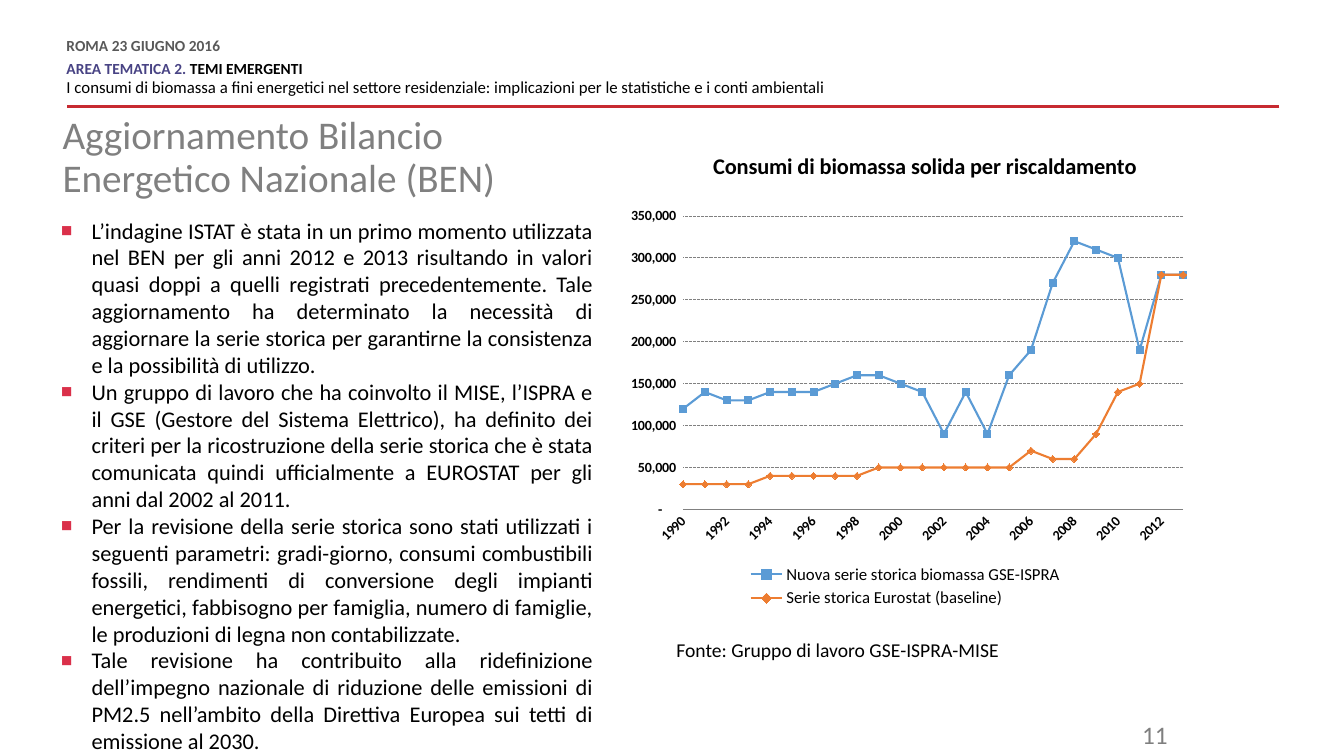
from lxml import etree
from pptx import Presentation
from pptx.chart.data import CategoryChartData
from pptx.dml.color import RGBColor
from pptx.enum.chart import XL_CHART_TYPE, XL_LEGEND_POSITION, XL_MARKER_STYLE, XL_TICK_MARK
from pptx.enum.dml import MSO_LINE
from pptx.enum.shapes import MSO_CONNECTOR
from pptx.enum.text import PP_ALIGN
from pptx.oxml.ns import qn
from pptx.util import Inches, Pt

BLACK = RGBColor(0, 0, 0)
DARK_GREY = RGBColor(0x59, 0x59, 0x59)
GREY = RGBColor(0x80, 0x80, 0x80)
PAGE_GREY = RGBColor(0x7F, 0x7F, 0x7F)
PURPLE = RGBColor(0x48, 0x43, 0x84)
RULE_RED = RGBColor(0xC7, 0x2A, 0x31)
BLUE = RGBColor(0x5B, 0x9B, 0xD5)
ORANGE = RGBColor(0xED, 0x7D, 0x31)
BULLET_RED = RGBColor(0xDA, 0x30, 0x4A)
FONT = "Calibri"
LEFT, RIGHT = PP_ALIGN.LEFT, PP_ALIGN.RIGHT
JUSTIFY = PP_ALIGN.JUSTIFY
NO_TICK = XL_TICK_MARK.NONE
SQUARE, DIAMOND = XL_MARKER_STYLE.SQUARE, XL_MARKER_STYLE.DIAMOND
SHORT_DASH = MSO_LINE.SQUARE_DOT

# Each header line: runs as (text, size, colour, bold), then paragraph spacing
HEADER = [
    ([("ROMA 23 GIUGNO 2016", 11, DARK_GREY, True)], {"space_after": Pt(6)}),
    ([("AREA TEMATICA 2. ", 11, PURPLE, True), ("TEMI EMERGENTI", 11, BLACK, True)], {}),
    ([("I consumi di biomassa a fini energetici nel settore residenziale: "
       "implicazioni per le statistiche e i conti ambientali", 12, BLACK, False)],
     {"space_before": Pt(3), "space_after": Pt(6)}),
]
TITLE = "Aggiornamento Bilancio Energetico Nazionale (BEN)"
BULLETS = [
    "L’indagine ISTAT è stata in un primo momento utilizzata nel BEN per gli anni 2012 e 2013 "
    "risultando in valori quasi doppi a quelli registrati precedentemente. Tale aggiornamento ha "
    "determinato la necessità di aggiornare la serie storica per garantirne la consistenza e la "
    "possibilità di utilizzo.",
    "Un gruppo di lavoro che ha coinvolto il MISE, l’ISPRA e il GSE (Gestore del Sistema "
    "Elettrico), ha definito dei criteri per la ricostruzione della serie storica che è stata "
    "comunicata quindi ufficialmente a EUROSTAT per gli anni dal 2002 al 2011.",
    "Per la revisione della serie storica sono stati utilizzati i seguenti parametri: "
    "gradi-giorno, consumi combustibili fossili, rendimenti di conversione degli impianti "
    "energetici, fabbisogno per famiglia, numero di famiglie, le produzioni di legna non "
    "contabilizzate.",
    "Tale revisione ha contribuito alla ridefinizione dell’impegno nazionale di riduzione delle "
    "emissioni di PM2.5 nell’ambito della Direttiva Europea sui tetti di emissione al 2030.",
]
SOURCE = "Fonte: Gruppo di lavoro GSE-ISPRA-MISE"
PAGE = "11"
CHART_TITLE = "Consumi di biomassa solida per riscaldamento"
YEARS = range(1990, 2014)
# Name, colour, marker, values in units of VALUE_STEP
VALUE_STEP = 10000
SERIES = [
    ("Nuova serie storica biomassa GSE-ISPRA", BLUE, SQUARE,
     [12, 14, 13, 13, 14, 14, 14, 15, 16, 16, 15, 14,
      9, 14, 9, 16, 19, 27, 32, 31, 30, 19, 28, 28]),
    ("Serie storica Eurostat (baseline)", ORANGE, DIAMOND,
     [3, 3, 3, 3, 4, 4, 4, 4, 4, 5, 5, 5,
      5, 5, 5, 5, 7, 6, 6, 9, 14, 15, 28, 28]),
]
VALUE_FORMAT = r'_-* #,##0_-;\-* #,##0_-;_-* "-"??_-;_-@_'

# Left, top, width, height in inches
HEADER_BOX = (0.66, 0.39, 8.34, 0.59)
TITLE_BOX = (0.62, 1.15, 5.15, 1.13)
BODY_BOX = (0.5, 2.1, 5.48, 5.49)
CHART_BOX = (6.11, 1.46, 5.74, 4.62)
SOURCE_BOX = (6.61, 6.28, 4.38, 0.34)
PAGE_BOX = (10.5, 7.09, 1.18, 0.35)
RULE_LEFT, RULE_RIGHT, RULE_TOP = 0.66, 12.69, 1.06
# Left, top, width, height as percentages of the chart
PLOT_AREA = (11.6, 14.8, 86.4, 63)
LEGEND_AREA = (22, 88.8, 56, 11)
TITLE_PLACE = (16.1, -0.6)
INDENT = Inches(0.31)


def apply(target, **values):
    for name, value in values.items():
        setattr(target, name, value)


def style_font(font, size, colour, bold=False):
    apply(font, size=Pt(size), name=FONT, bold=bold)
    font.color.rgb = colour


def add_text(slide, box, paragraphs, inset=True):
    """Add a text box; each paragraph is a list of runs and a dict of format values."""
    frame = slide.shapes.add_textbox(*map(Inches, box)).text_frame
    frame.word_wrap = True
    if not inset:
        apply(frame, margin_left=0, margin_top=0, margin_right=0, margin_bottom=0)
    for index, (runs, layout) in enumerate(paragraphs):
        paragraph = frame.add_paragraph() if index else frame.paragraphs[0]
        apply(paragraph, **layout)
        for text, *style in runs:
            run = paragraph.add_run()
            run.text = text
            style_font(run.font, *style)
    return frame


def add_bullet(paragraph):
    properties = paragraph._p.get_or_add_pPr()
    properties.set("marL", str(INDENT))
    properties.set("indent", str(-INDENT))
    colour = etree.SubElement(properties, qn("a:buClr"))
    etree.SubElement(colour, qn("a:srgbClr"), val=str(BULLET_RED))
    etree.SubElement(properties, qn("a:buSzPct"), val="160000")
    etree.SubElement(properties, qn("a:buFont"), typeface=FONT)
    etree.SubElement(properties, qn("a:buChar"), char="▪")


def chart_layout(place, inner=False):
    """Return a manual layout element for a place given in percentages of the chart."""
    layout = etree.Element(qn("c:layout"))
    manual = etree.SubElement(layout, qn("c:manualLayout"))
    if inner:
        etree.SubElement(manual, qn("c:layoutTarget"), val="inner")
    for name in ("xMode", "yMode"):
        etree.SubElement(manual, qn("c:" + name), val="edge")
    for name, percentage in zip("xywh", place):
        etree.SubElement(manual, qn("c:" + name), val=f"{percentage / 100:.3f}")
    return layout


def place_part(part, anchor, place, inner=False):
    """Put a manual layout after the anchor child, or first when there is none."""
    for old in part.findall(qn("c:layout")):
        part.remove(old)
    layout = chart_layout(place, inner)
    if anchor is None:
        part.insert(0, layout)
    else:
        part.find(qn(anchor)).addnext(layout)


def add_biomass_chart(slide):
    data = CategoryChartData(number_format=VALUE_FORMAT)
    data.categories = [str(year) for year in YEARS]
    for name, _, _, steps in SERIES:
        data.add_series(name, [step * VALUE_STEP for step in steps])
    chart = slide.shapes.add_chart(
        XL_CHART_TYPE.LINE_MARKERS, *map(Inches, CHART_BOX), data).chart
    style_font(chart.font, 10, BLACK)
    chart.plots[0].vary_by_categories = False

    chart.has_title = True
    title = chart.chart_title
    title.text_frame.text = CHART_TITLE
    style_font(title.text_frame.paragraphs[0].runs[0].font, 16, BLACK, True)
    title.include_in_layout = False
    place_part(title._element, "c:tx", TITLE_PLACE)

    chart.has_legend = True
    apply(chart.legend, position=XL_LEGEND_POSITION.BOTTOM, include_in_layout=False)
    style_font(chart.legend.font, 12, BLACK)
    place_part(chart.legend._element, "c:legendPos", LEGEND_AREA)
    place_part(chart.plots[0]._element.getparent(), None, PLOT_AREA, inner=True)

    years, values = chart.category_axis, chart.value_axis
    for axis in (years, values):
        apply(axis, major_tick_mark=NO_TICK, minor_tick_mark=NO_TICK)
        style_font(axis.tick_labels.font, 10, BLACK, True)
    years.format.line.color.rgb = GREY
    years._element.find(qn("c:txPr")).find(qn("a:bodyPr")).set("rot", "-2700000")
    skip = etree.Element(qn("c:tickLblSkip"), val="2")
    years._element.find(qn("c:lblOffset")).addnext(skip)

    apply(values, minimum_scale=0, maximum_scale=350000, major_unit=50000)
    apply(values.tick_labels, number_format=VALUE_FORMAT, number_format_is_linked=False)
    values.format.line.fill.background()
    grid = values.major_gridlines.format.line
    grid.color.rgb = GREY
    apply(grid, width=Pt(0.75), dash_style=SHORT_DASH)
    for old in values._element.findall(qn("c:crossBetween")):
        values._element.remove(old)
    between = etree.Element(qn("c:crossBetween"), val="midCat")
    values._element.find(qn("c:crosses")).addnext(between)

    for series, (_, colour, marker, _) in zip(chart.plots[0].series, SERIES):
        series.smooth = False
        series.format.line.color.rgb = colour
        series.format.line.width = Pt(1.5)
        apply(series.marker, style=marker, size=5)
        series.marker.format.fill.solid()
        series.marker.format.fill.fore_color.rgb = colour
        series.marker.format.line.color.rgb = colour


def main():
    presentation = Presentation()
    apply(presentation, slide_width=Inches(13.33), slide_height=Inches(7.5))
    slide = presentation.slides.add_slide(presentation.slide_layouts[6])

    rule = slide.shapes.add_connector(
        MSO_CONNECTOR.STRAIGHT, *map(Inches, (RULE_RIGHT, RULE_TOP, RULE_LEFT, RULE_TOP)))
    rule.line.color.rgb = RULE_RED
    rule.line.width = Pt(2)
    etree.SubElement(rule._element.spPr, qn("a:effectLst"))

    header = [(runs, {"line_spacing": Pt(10.8), **spacing}) for runs, spacing in HEADER]
    add_text(slide, HEADER_BOX, header, inset=False)
    add_text(slide, PAGE_BOX, [([(PAGE, 18, PAGE_GREY)], {"alignment": RIGHT})])
    add_text(slide, TITLE_BOX, [([(TITLE, 28, GREY)], {"line_spacing": 0.9})], inset=False)
    add_text(slide, SOURCE_BOX, [([(SOURCE, 14, BLACK)], {"alignment": LEFT})])
    body = add_text(slide, BODY_BOX,
                    [([(text, 16, BLACK)], {"alignment": JUSTIFY}) for text in BULLETS])
    for paragraph in body.paragraphs:
        add_bullet(paragraph)
    add_biomass_chart(slide)
    presentation.save("out.pptx")


if __name__ == "__main__":
    main()
